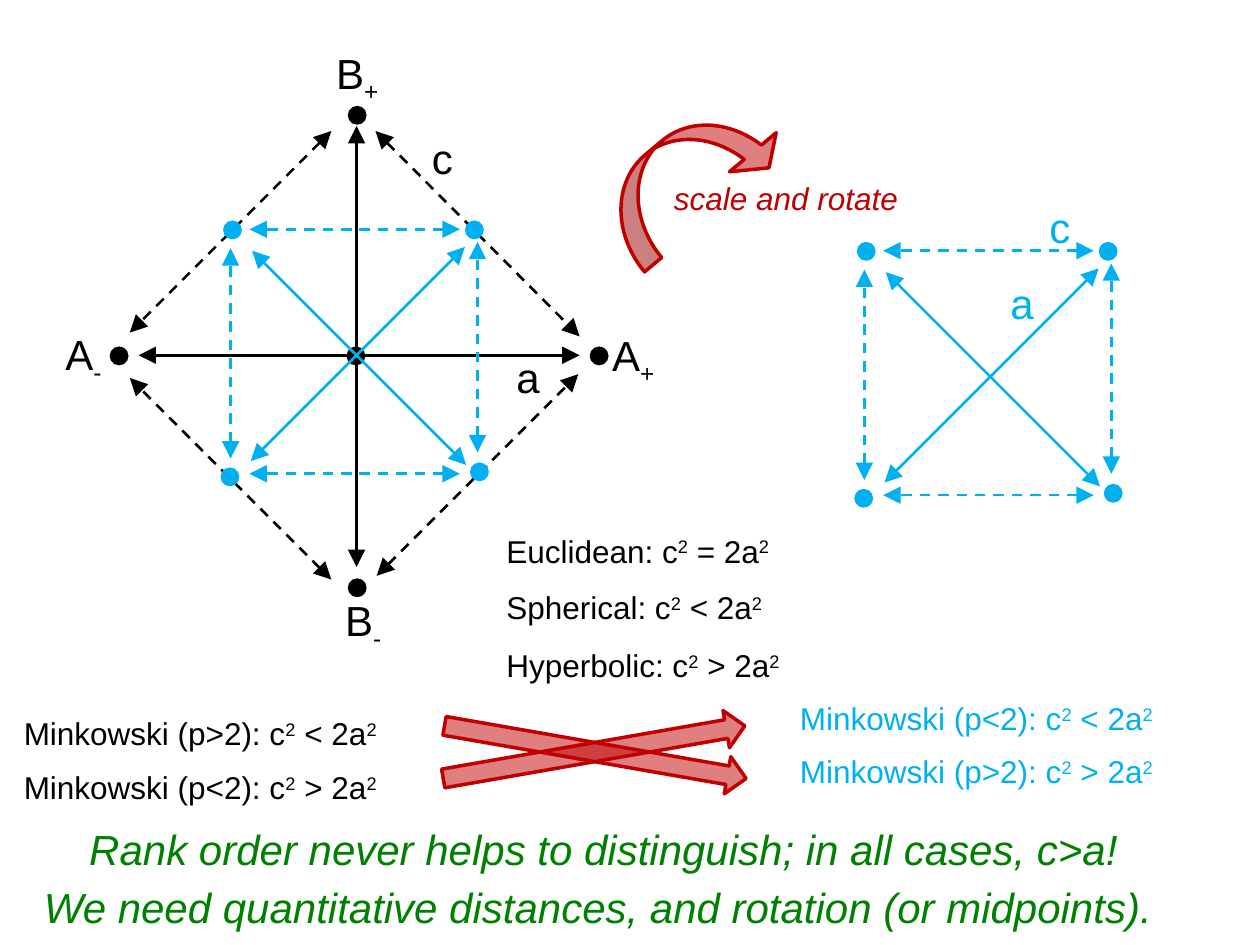
from dataclasses import dataclass
from typing import Iterator, NamedTuple

from lxml import etree
from pptx import Presentation
from pptx.dml.color import RGBColor
from pptx.enum.dml import MSO_LINE
from pptx.enum.shapes import MSO_CONNECTOR, MSO_SHAPE
from pptx.enum.text import MSO_AUTO_SIZE
from pptx.oxml.ns import qn
from pptx.util import Cm, Length, Pt

STRAIGHT = MSO_CONNECTOR.STRAIGHT
ELLIPSE = MSO_SHAPE.OVAL
RIGHT_ARROW = MSO_SHAPE.RIGHT_ARROW
CURVED_ARROW = MSO_SHAPE.CURVED_DOWN_ARROW
DASH = MSO_LINE.DASH
FIT_TEXT = MSO_AUTO_SIZE.SHAPE_TO_FIT_TEXT
CM_PER_INCH = 2.54


@dataclass(frozen=True)
class Theme:
    font: str = "Arial"
    black: str = "000000"
    blue: str = "00B0F0"
    red: str = "C00000"
    green: str = "008000"
    body: float = 18
    large: float = 24
    line: float = 1.5
    outline: float = 2
    dot: float = 0.15
    baselines: tuple = (("^", "30000"), ("_", "-25000"))


class Label(NamedTuple):
    left: float
    top: float
    width: float
    text: str


class Link(NamedTuple):
    x1: float
    y1: float
    x2: float
    y2: float
    dashed: bool = False


class BlockArrow(NamedTuple):
    kind: MSO_SHAPE
    left: float
    top: float
    width: float
    height: float
    rotation: float
    adjustments: tuple = ()


THEME = Theme()
CENTRE_DOT = [(2.75, 2.75)]
AXIS_DOTS = [(4.68, 2.75), (0.87, 2.75), (2.76, 0.84), (2.76, 4.59)]
AXIS_LINKS = [
    Link(1.1, 2.82, 4.6, 2.82),
    Link(2.83, 4.5, 2.83, 1),
    Link(2.98, 1.04, 4.6, 2.67, True),
    Link(2.63, 4.6, 1.03, 3, True),
    Link(2.63, 1.04, 1.03, 2.64, True),
    Link(2.99, 4.57, 4.59, 2.97, True),
]
AXIS_LABELS = [
    Label(4.76, 2.57, 0.56, "A_+"),
    Label(0.42, 2.56, 0.5, "A_-"),
    Label(2.57, 0.33, 0.56, "B_+"),
    Label(2.64, 4.67, 0.5, "B_-"),
    Label(4, 2.74, 0.33, "a"),
    Label(3.33, 1, 0.33, "c"),
]
SQUARE_DOTS = [(3.69, 1.75), (3.73, 3.67), (1.77, 1.75), (1.75, 3.71)]
SQUARE_LINKS = [
    Link(2, 1.99, 3.7, 3.69),
    Link(1.99, 3.66, 3.69, 1.96),
    Link(3.79, 3.59, 3.79, 1.92, True),
    Link(1.83, 3.64, 1.83, 1.97, True),
    Link(3.65, 1.82, 1.98, 1.82, True),
    Link(3.65, 3.76, 1.98, 3.76, True),
]
SQUARE_OFFSETS = [(0, 0), (5.03, 0.17)]
SQUARE_LABELS = [Label(8.23, 1.55, 0.33, "c"), Label(7.92, 2.15, 0.33, "a")]
FORMULAS = [
    Label(3.92, 4.17, 2.33, "Euclidean: c^2 = 2a^2"),
    Label(3.92, 4.62, 2.27, "Spherical: c^2 < 2a^2"),
    Label(3.92, 5.08, 2.41, "Hyperbolic: c^2 > 2a^2"),
    Label(0.09, 5.62, 3.05, "Minkowski (p>2): c^2 < 2a^2"),
    Label(0.09, 6.05, 3.05, "Minkowski (p<2): c^2 > 2a^2"),
]
ROTATED_FORMULAS = [
    Label(6.25, 5.5, 3.05, "Minkowski (p<2): c^2 < 2a^2"),
    Label(6.25, 5.92, 3.05, "Minkowski (p>2): c^2 > 2a^2"),
]
BLOCK_ARROWS = [
    BlockArrow(RIGHT_ARROW, 3.5, 5.82, 2.43, 0.3, 350.1),
    BlockArrow(RIGHT_ARROW, 3.51, 5.82, 2.43, 0.3, 9.9),
    BlockArrow(CURVED_ARROW, 4.71, 1.04, 1.53, 0.71, 320.1, (0.25, 0.682, 0.25)),
]
ROTATE_LABEL = [Label(5.25, 1.37, 2, "scale and rotate")]
CONCLUSIONS = [
    Label(0.61, 6.49, 8.45, "Rank order never helps to distinguish; in all cases, c>a!"),
    Label(0.25, 6.95, 9.09, "We need quantitative distances, and rotation (or midpoints)."),
]


def lengths(*inches: float) -> list[Length]:
    """Convert slide coordinates to lengths."""
    return [Cm(value * CM_PER_INCH) for value in inches]


def split_spans(text: str) -> Iterator[tuple[str, str]]:
    """Yield text pieces with their baselines, where ^ raises and _ lowers one character."""
    shifts = dict(THEME.baselines)
    plain, shift = "", ""
    for char in text:
        if shift:
            yield char, shift
            shift = ""
        elif char in shifts:
            yield plain, ""
            plain, shift = "", shifts[char]
        else:
            plain += char
    if plain:
        yield plain, ""


def add_label(page, label: Label, *, color: str, size: float, italic: bool = False) -> None:
    """Add one line of formatted text."""
    height = 0.5 if size == THEME.large else 0.4
    box = page.shapes.add_textbox(*lengths(label.left, label.top, label.width, height))
    box.text_frame.word_wrap = len(label.text) == 1
    box.text_frame.auto_size = FIT_TEXT
    para = box.text_frame.paragraphs[0]
    for text, baseline in split_spans(label.text):
        span = para.add_run()
        span.text = text
        span.font.name = THEME.font
        span.font.size = Pt(size)
        span.font.italic = italic
        span.font.color.rgb = RGBColor.from_string(color)
        if baseline:
            span._r.get_or_add_rPr().set("baseline", baseline)


def add_labels(page, labels: list[Label], **style) -> None:
    """Add several labels in one style."""
    for label in labels:
        add_label(page, label, **style)


def add_link(page, link: Link, color: str, dx: float = 0, dy: float = 0) -> None:
    """Add a line with an arrowhead at both ends."""
    line = page.shapes.add_connector(
        STRAIGHT, *lengths(link.x1 + dx, link.y1 + dy, link.x2 + dx, link.y2 + dy)
    )
    line.line.color.rgb = RGBColor.from_string(color)
    line.line.width = Pt(THEME.line)
    if link.dashed:
        line.line.dash_style = DASH
    for end in ("a:headEnd", "a:tailEnd"):
        etree.SubElement(line.line._ln, qn(end), type="triangle", w="lg", len="lg")
    etree.SubElement(line._element.spPr, qn("a:effectLst"))


def add_dot(page, left: float, top: float, color: str) -> None:
    """Add a filled point."""
    dot = page.shapes.add_shape(ELLIPSE, *lengths(left, top, THEME.dot, THEME.dot))
    dot.shadow.inherit = False
    dot.fill.solid()
    dot.fill.fore_color.rgb = RGBColor.from_string(color)
    dot.line.fill.background()


def add_block_arrow(page, arrow: BlockArrow) -> None:
    """Add a half-transparent red arrow."""
    shape = page.shapes.add_shape(
        arrow.kind, *lengths(arrow.left, arrow.top, arrow.width, arrow.height)
    )
    shape.shadow.inherit = False
    shape.rotation = arrow.rotation
    for index, value in enumerate(arrow.adjustments):
        shape.adjustments[index] = value
    shape.fill.solid()
    shape.fill.fore_color.rgb = RGBColor.from_string(THEME.red)
    tint = shape._element.spPr.find(qn("a:solidFill")).find(qn("a:srgbClr"))
    etree.SubElement(tint, qn("a:alpha"), val="50000")
    shape.line.color.rgb = RGBColor.from_string(THEME.red)
    shape.line.width = Pt(THEME.outline)


def add_figure(page, dots: list, links: list[Link], color: str, dx: float = 0, dy: float = 0) -> None:
    """Add points and the lines between them, moved by an offset."""
    for left, top in dots:
        add_dot(page, left + dx, top + dy, color)
    for link in links:
        add_link(page, link, color, dx, dy)


def main() -> None:
    """Build the slide and save it."""
    deck = Presentation()
    deck.slide_width, deck.slide_height = lengths(10, 7.5)
    page = deck.slides.add_slide(deck.slide_layouts[6])
    add_figure(page, CENTRE_DOT + AXIS_DOTS, AXIS_LINKS, THEME.black)
    add_labels(page, AXIS_LABELS, color=THEME.black, size=THEME.large)
    for dx, dy in SQUARE_OFFSETS:
        add_figure(page, SQUARE_DOTS, SQUARE_LINKS, THEME.blue, dx, dy)
    add_labels(page, SQUARE_LABELS, color=THEME.blue, size=THEME.large)
    add_labels(page, FORMULAS, color=THEME.black, size=THEME.body)
    add_labels(page, ROTATED_FORMULAS, color=THEME.blue, size=THEME.body)
    for arrow in BLOCK_ARROWS:
        add_block_arrow(page, arrow)
    add_labels(page, ROTATE_LABEL, color=THEME.red, size=THEME.body, italic=True)
    add_labels(page, CONCLUSIONS, color=THEME.green, size=THEME.large, italic=True)
    deck.save("out.pptx")


if __name__ == "__main__":
    main()
